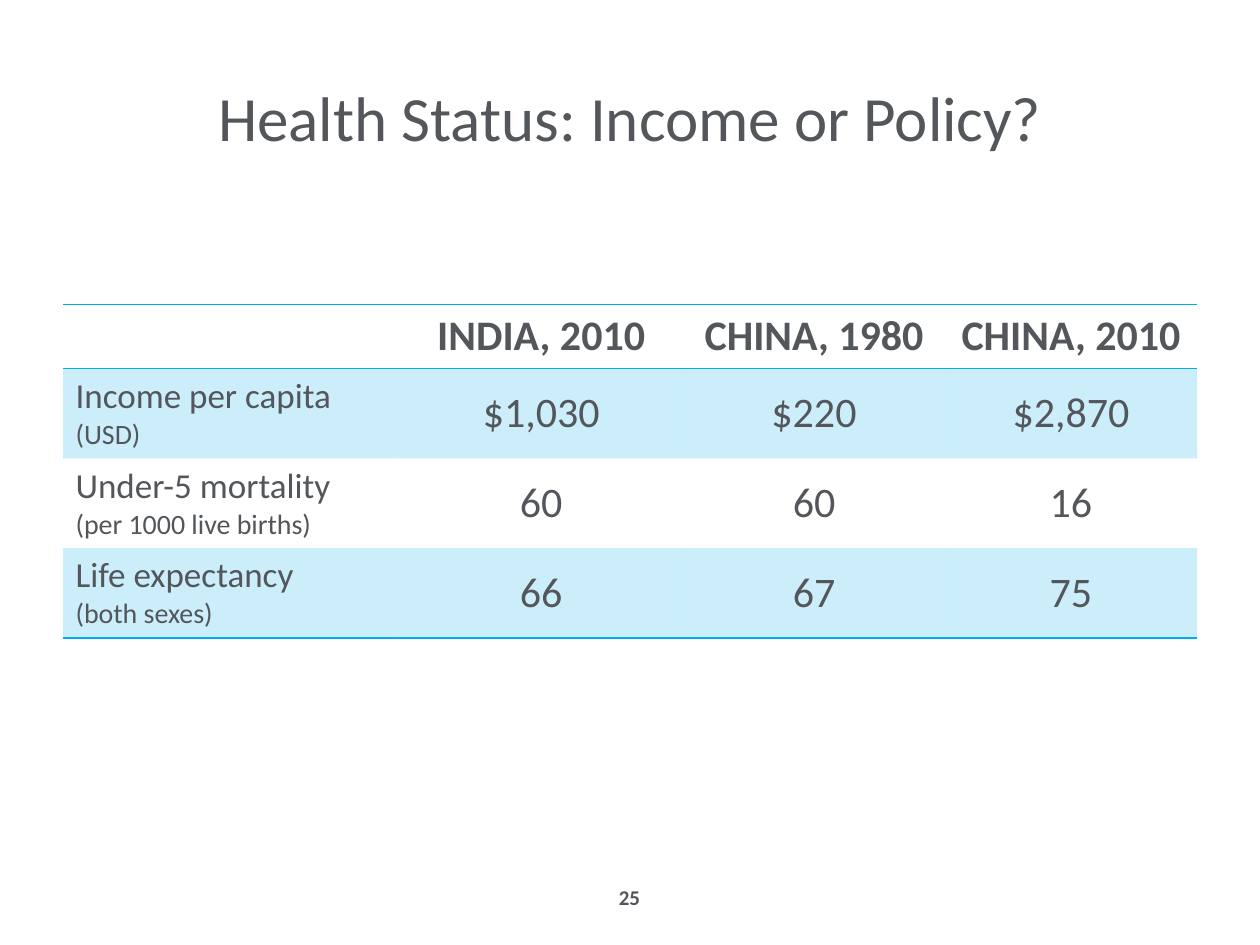
"""Build a slide comparing health indicators for India and China."""
from dataclasses import dataclass

from pptx import Presentation
from pptx import util as u
from pptx.dml.color import RGBColor
from pptx.enum import text
from pptx.oxml import parse_xml
from pptx.oxml.ns import nsdecls, qn

FONT, GREY, BLUE = "Calibri", "53565A", "00AEEF"
COLUMN_WIDTHS = (6.78, 5.72, 5.28, 5.08)
HEADER_HEIGHT, ROW_HEIGHT = 1.29, 1.81


@dataclass(frozen=True)
class Indicator:
    name: str
    unit: str
    values: tuple[str, ...]


@dataclass(frozen=True)
class Caption:
    wording: str
    box: tuple[float, float, float, float]
    size: int
    bold: bool = False


CAPTIONS = (
    Caption("Health Status: Income or Policy?", (1.27, 0.76, 22.86, 3.18), 36),
    Caption("25", (9.73, 17.58, 5.92, 1.02), 12, True),
)
HEADINGS = ("", "INDIA, 2010", "CHINA, 1980", "CHINA, 2010")
INDICATORS = (
    Indicator("Income per capita", "(USD)", ("$1,030", "$220", "$2,870")),
    Indicator("Under-5 mortality", "(per 1000 live births)", ("60", "60", "16")),
    Indicator("Life expectancy", "(both sexes)", ("66", "67", "75")),
)


def color(value: str) -> RGBColor:
    return RGBColor.from_string(value)


def write(paragraph, wording: str, size: int, bold: bool = False, centred: bool = True) -> None:
    paragraph.text = wording
    paragraph.alignment = text.PP_ALIGN.CENTER if centred else text.PP_ALIGN.LEFT
    font = paragraph.font
    font.name, font.size, font.bold = FONT, u.Pt(size), bold
    font.color.rgb = color(GREY)


def add_caption(slide, caption: Caption) -> None:
    shape = slide.shapes.add_textbox(*map(u.Cm, caption.box))
    frame = shape.text_frame
    frame.word_wrap = True
    frame.vertical_anchor = text.MSO_ANCHOR.MIDDLE
    write(frame.paragraphs[0], caption.wording, caption.size, caption.bold)


def style_cell(cell, tinted: bool, ruled: str) -> None:
    if tinted:
        cell.fill.solid()
        cell.fill.fore_color.rgb = color(BLUE)
    else:
        cell.fill.background()
    properties = cell._tc.get_or_add_tcPr()
    for tint in properties.iter(qn("a:srgbClr")):
        tint.append(parse_xml(f'<a:alpha {nsdecls("a")} val="20000"/>'))
    for position, side in enumerate("LRTB"):
        paint = f'<a:solidFill><a:srgbClr val="{BLUE}"/></a:solidFill>' if side in ruled else "<a:noFill/>"
        border = parse_xml(f'<a:ln{side} {nsdecls("a")} w="12700">{paint}</a:ln{side}>')
        properties.insert(position, border)


def add_indicator_table(slide) -> None:
    heights = (HEADER_HEIGHT,) + (ROW_HEIGHT,) * len(INDICATORS)
    table = slide.shapes.add_table(
        len(heights), len(COLUMN_WIDTHS), u.Cm(1.27), u.Cm(6.14),
        u.Cm(sum(COLUMN_WIDTHS)), u.Cm(sum(heights))).table
    table.first_row = table.horz_banding = False
    for column, width in zip(table.columns, COLUMN_WIDTHS):
        column.width = u.Cm(width)
    for row, height in zip(table.rows, heights):
        row.height = u.Cm(height)

    for column, heading in enumerate(HEADINGS):
        cell = table.cell(0, column)
        write(cell.text_frame.paragraphs[0], heading, 24, bold=True)
        style_cell(cell, False, "TB")

    for row, indicator in enumerate(INDICATORS, 1):
        label = table.cell(row, 0).text_frame
        write(label.paragraphs[0], indicator.name, 20, centred=False)
        write(label.add_paragraph(), indicator.unit, 16, centred=False)
        for column, value in enumerate(indicator.values, 1):
            cell = table.cell(row, column)
            cell.vertical_anchor = text.MSO_ANCHOR.MIDDLE
            write(cell.text_frame.paragraphs[0], value, 24)
        ruled = ("T" if row == 1 else "") + ("B" if row == len(INDICATORS) else "")
        for cell in table.rows[row].cells:
            style_cell(cell, row % 2 == 1, ruled)


def main() -> None:
    presentation = Presentation()
    presentation.slide_width, presentation.slide_height = u.Cm(25.4), u.Cm(19.05)
    slide = presentation.slides.add_slide(presentation.slide_layouts[6])
    for caption in CAPTIONS:
        add_caption(slide, caption)
    add_indicator_table(slide)
    presentation.save("out.pptx")


if __name__ == "__main__":
    main()
